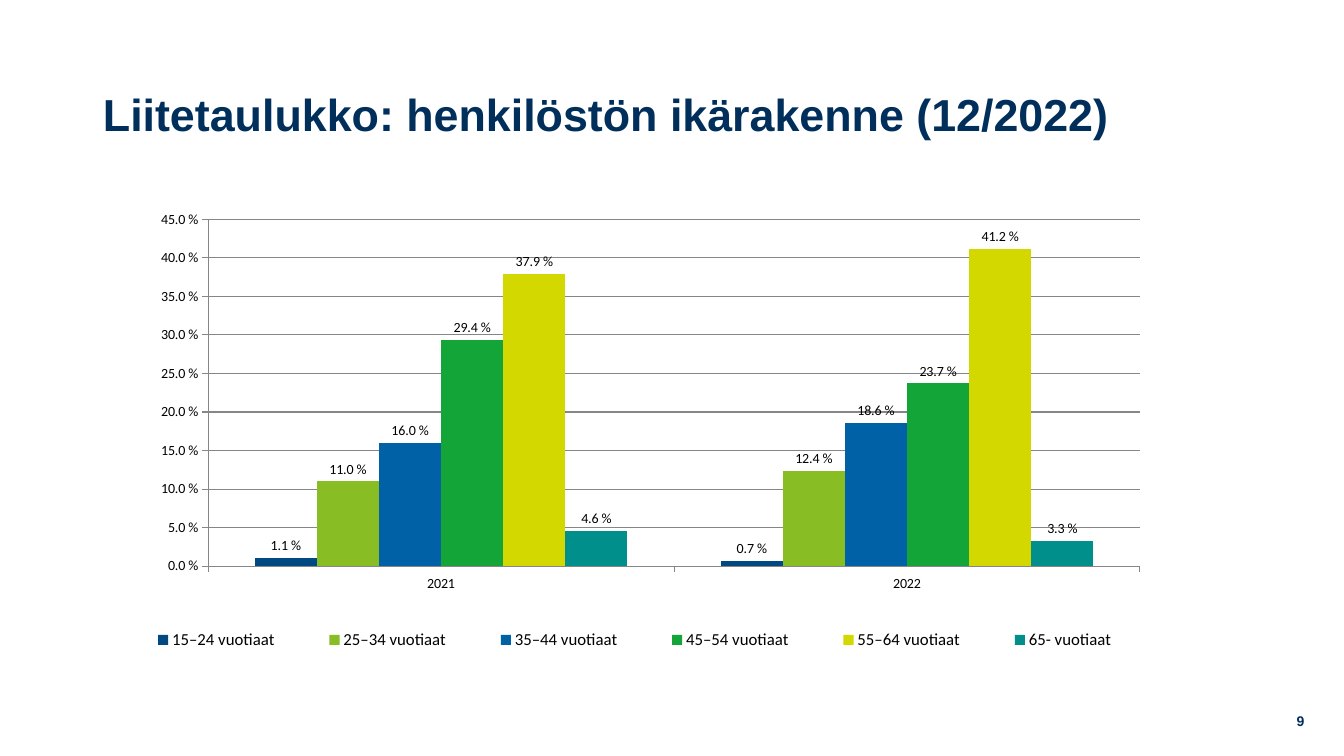
from dataclasses import dataclass

from lxml import etree
from pptx import Presentation
from pptx.chart.chart import Chart
from pptx.chart.data import CategoryChartData
from pptx.dml.color import RGBColor
from pptx.enum.chart import (XL_CHART_TYPE, XL_LABEL_POSITION,
                             XL_LEGEND_POSITION, XL_TICK_MARK)
from pptx.enum.text import MSO_ANCHOR, MSO_AUTO_SIZE, PP_ALIGN
from pptx.oxml.ns import qn
from pptx.util import Cm, Pt

NAVY = "002F5B"
BLACK = "000000"
GREY = "868686"
PERCENT = "0.0\\ %"
YEARS = ("2021", "2022")


@dataclass(frozen=True)
class AgeGroup:
    name: str
    shares: tuple[float, float]
    colour: str


@dataclass(frozen=True)
class Box:
    left: float
    top: float
    width: float
    height: float


AGE_GROUPS = (
    AgeGroup("15–24 vuotiaat", (0.011, 0.007), "004982"),
    AgeGroup("25–34 vuotiaat", (0.11, 0.124), "89BD24"),
    AgeGroup("35–44 vuotiaat", (0.16, 0.186), "0061A7"),
    AgeGroup("45–54 vuotiaat", (0.294, 0.237), "13A538"),
    AgeGroup("55–64 vuotiaat", (0.379, 0.412), "D3D800"),
    AgeGroup("65- vuotiaat", (0.046, 0.033), "008F8B"),
)

# Boxes on the slide in centimetres
TITLE_BOX = Box(2.34, 1.02, 27.03, 3.68)
NUMBER_BOX = Box(25.5, 17.65, 7.62, 1.02)
CHART_BOX = Box(2.34, 5.23, 27.15, 11.94)
# Boxes inside the chart as fractions of its size
PLOT_BOX = Box(0.107, 0.025, 0.865, 0.732)
LEGEND_BOX = Box(0.015, 0.87, 0.976, 0.085)


def rgb(colour: str) -> RGBColor:
    return RGBColor.from_string(colour)


def style_font(font, size: float, colour: str, name: str, bold: bool = False) -> None:
    font.size = Pt(size)
    font.name = name
    font.bold = bold
    font.color.rgb = rgb(colour)


def place(shape, box: Box) -> None:
    shape.left, shape.top = Cm(box.left), Cm(box.top)
    shape.width, shape.height = Cm(box.width), Cm(box.height)


def write_text(shape, text: str, size: float, alignment: PP_ALIGN) -> None:
    frame = shape.text_frame
    frame.text = text
    frame.word_wrap = True
    frame.auto_size = MSO_AUTO_SIZE.NONE
    frame.vertical_anchor = MSO_ANCHOR.MIDDLE
    paragraph = frame.paragraphs[0]
    paragraph.alignment = alignment
    style_font(paragraph.runs[0].font, size, NAVY, "Arial", bold=True)


def set_layout(parent, box: Box, index: int, inner: bool = False) -> None:
    """Give a plot area or legend a fixed place inside the chart."""
    for existing in parent.findall(qn("c:layout")):
        parent.remove(existing)
    layout = etree.Element(qn("c:layout"))
    manual = etree.SubElement(layout, qn("c:manualLayout"))
    values = [("layoutTarget", "inner")] if inner else []
    values += [("xMode", "edge"), ("yMode", "edge"),
               ("x", box.left), ("y", box.top),
               ("w", box.width), ("h", box.height)]
    for tag, value in values:
        etree.SubElement(manual, qn(f"c:{tag}")).set("val", str(value))
    parent.insert(index, layout)


def style_axes(chart: Chart) -> None:
    for axis in (chart.category_axis, chart.value_axis):
        axis.major_tick_mark = XL_TICK_MARK.OUTSIDE
        axis.minor_tick_mark = XL_TICK_MARK.NONE
        axis.format.line.color.rgb = rgb(GREY)
        axis.format.line.width = Pt(0.75)
        style_font(axis.tick_labels.font, 10, BLACK, "Calibri")
    value_axis = chart.value_axis
    value_axis.minimum_scale, value_axis.maximum_scale = 0, 0.45
    value_axis.major_unit = 0.05
    value_axis.tick_labels.number_format = PERCENT
    value_axis.tick_labels.number_format_is_linked = False
    value_axis.has_major_gridlines = True
    gridline = value_axis.major_gridlines.format.line
    gridline.color.rgb = rgb(GREY)
    gridline.width = Pt(0.75)


def style_series(chart: Chart) -> None:
    plot = chart.plots[0]
    plot.gap_width = 150
    plot.overlap = 0
    plot.vary_by_categories = False
    for series, group in zip(plot.series, AGE_GROUPS):
        series.format.fill.solid()
        series.format.fill.fore_color.rgb = rgb(group.colour)
        series.invert_if_negative = False
        labels = series.data_labels
        labels.show_value = True
        labels.number_format = PERCENT
        labels.number_format_is_linked = False
        labels.position = XL_LABEL_POSITION.OUTSIDE_END
        style_font(labels.font, 10, BLACK, "Calibri")


def add_age_chart(slide) -> None:
    data = CategoryChartData(number_format=PERCENT)
    data.categories = YEARS
    for group in AGE_GROUPS:
        data.add_series(group.name, group.shares)
    box = CHART_BOX
    chart = slide.shapes.add_chart(
        XL_CHART_TYPE.COLUMN_CLUSTERED, Cm(box.left), Cm(box.top),
        Cm(box.width), Cm(box.height), data).chart
    chart.has_title = False
    style_font(chart.font, 10, BLACK, "Calibri")
    style_axes(chart)
    style_series(chart)

    chart.has_legend = True
    legend = chart.legend
    legend.position = XL_LEGEND_POSITION.BOTTOM
    legend.include_in_layout = False
    style_font(legend.font, 12, BLACK, "Calibri")
    chart_space = chart.element
    set_layout(chart_space.find(".//" + qn("c:plotArea")), PLOT_BOX, 0, inner=True)
    set_layout(chart_space.find(".//" + qn("c:legend")), LEGEND_BOX, 1)


def main() -> None:
    presentation = Presentation()
    presentation.slide_width, presentation.slide_height = Cm(33.87), Cm(19.05)
    slide = presentation.slides.add_slide(presentation.slide_layouts[5])

    # Title
    title = slide.shapes.title
    place(title, TITLE_BOX)
    write_text(title, "Liitetaulukko: henkilöstön ikärakenne (12/2022)", 32, PP_ALIGN.LEFT)

    # Page number
    number = slide.shapes.add_textbox(0, 0, 0, 0)
    place(number, NUMBER_BOX)
    write_text(number, "9", 10, PP_ALIGN.RIGHT)

    # Age structure by year
    add_age_chart(slide)
    presentation.save("out.pptx")


if __name__ == "__main__":
    main()
